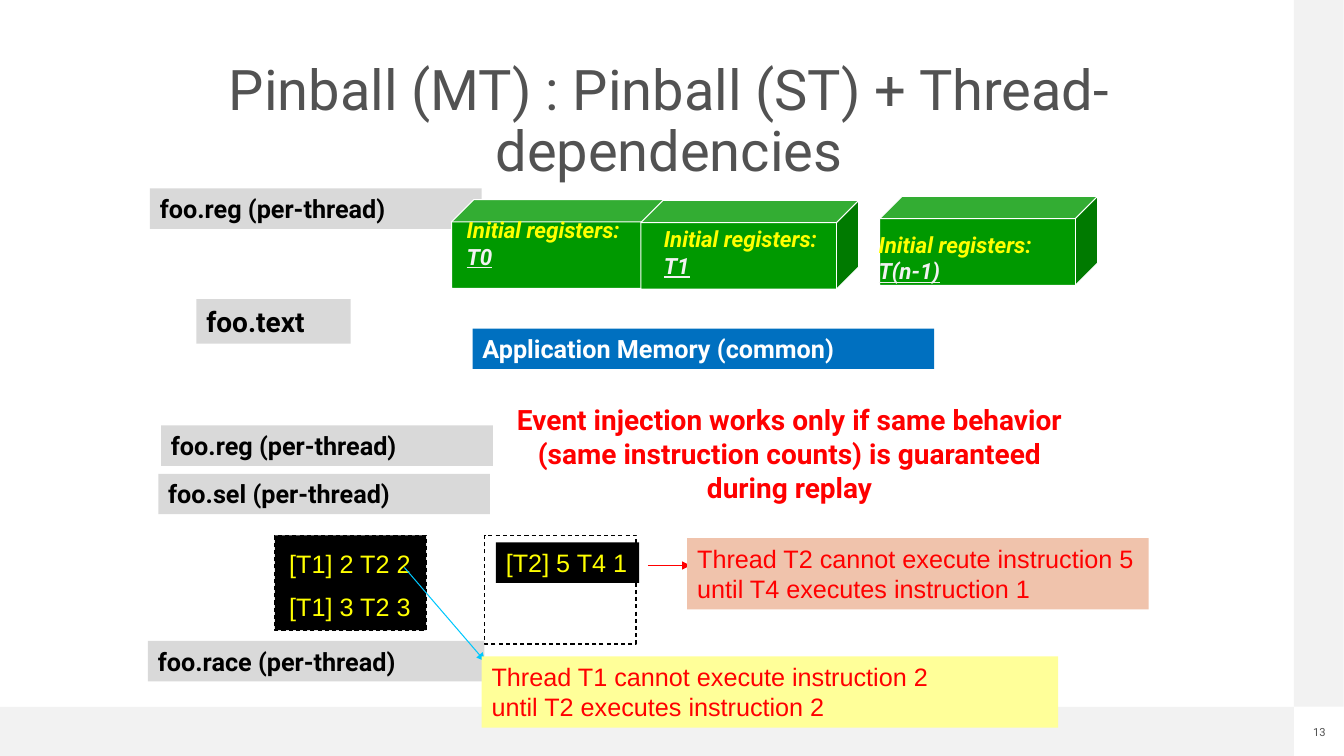
from lxml import etree
from pptx import Presentation
from pptx.dml.color import RGBColor
from pptx.enum.dml import MSO_LINE
from pptx.enum.shapes import MSO_CONNECTOR, MSO_SHAPE
from pptx.enum.text import MSO_ANCHOR, PP_ALIGN
from pptx.oxml.ns import qn
from pptx.util import Cm, Pt

prs = Presentation()
prs.slide_width, prs.slide_height = Cm(33.87), Cm(19.05)
slide = prs.slides.add_slide(prs.slide_layouts[6])
shapes = slide.shapes
rgb = RGBColor.from_string


def add_block(place, fill=None, line=None, dash=None, preset=MSO_SHAPE.RECTANGLE):
    block = shapes.add_shape(preset, *map(Cm, place))
    block.shadow.inherit = False
    if fill:
        block.fill.solid()
        block.fill.fore_color.rgb = rgb(fill)
    else:
        block.fill.background()
    if line:
        block.line.color.rgb = rgb(line)
        block.line.width = Pt(0.75)
        block.line.dash_style = dash
    else:
        block.line.fill.background()
    return block


def write(block, paragraphs, size, font="Roboto", align=PP_ALIGN.LEFT, wrap=True, **style):
    frame = block.text_frame
    frame.word_wrap = wrap
    frame.vertical_anchor = MSO_ANCHOR.TOP
    for index, runs in enumerate(paragraphs):
        paragraph = frame.paragraphs[0] if index == 0 else frame.add_paragraph()
        paragraph.alignment = align
        for text, color, extra in runs:
            run = paragraph.add_run()
            run.text = text
            run.font.color.rgb = rgb(color)
            values = {"name": font, "size": Pt(size), **style, **extra}
            for key, value in values.items():
                setattr(run.font, key, value)
    return frame


for margin in [(0, 17.81, 32.61, 1.25), (32.61, 0, 1.25, 17.81)]:
    add_block(margin, "F2F2F2")

headings = [
    ("13", (33.07, 18.29, 0.36, 0.33), 8, False, 1),
    ("Pinball (MT) : Pinball (ST) + Thread-dependencies", (1.57, 1.57, 30.58, 2.64), 40, True, 0.9),
]
for text, place, size, wrap, spacing in headings:
    heading = shapes.add_textbox(*map(Cm, place))
    frame = write(heading, [[(text, "525252", {})]], size, align=PP_ALIGN.CENTER, wrap=wrap)
    frame.paragraphs[0].line_spacing = spacing
    for side in ("left", "top", "right", "bottom"):
        setattr(frame, f"margin_{side}", 0)

labels = [
    ("foo.reg (per-thread)", (3.78, 4.75, 8.36, 1.02), "D9D9D9", "000000", 18),
    ("Application Memory (common)", (11.91, 8.28, 11.63, 1.02), "0070C0", "FFFFFF", 18),
    ("foo.text", (4.95, 7.54, 3.89, 1.12), "D9D9D9", "000000", 20),
    ("foo.reg (per-thread)", (4.06, 10.72, 8.36, 1.02), "D9D9D9", "000000", 18),
    ("foo.sel (per-thread)", (3.99, 11.94, 8.36, 1.02), "D9D9D9", "000000", 18),
    ("foo.race (per-thread)", (3.73, 16.15, 8.48, 1.02), "D9D9D9", "000000", 18),
]
for text, place, fill, color, size in labels:
    write(add_block(place, fill), [[(text, color, {})]], size, bold=True)

registers = [
    ("T0", (11.38, 5.03), (11.51, 5.33, 4.72, 1.63)),
    ("T1", (16.15, 5.05), (16.48, 5.56, 4.72, 1.63)),
    ("T(n-1)", (22.17, 4.95), (21.89, 5.69, 5.79, 1.63)),
]
for thread, corner, place in registers:
    add_block((*corner, 5.49, 2.24), "009900", "FFFFFF", preset=MSO_SHAPE.CUBE)
    runs = [("Initial registers: ", "FFFF00", {}), (thread, "F2F2F2", {"underline": True})]
    write(shapes.add_textbox(*map(Cm, place)), [runs], 16, bold=True, italic=True)

warning = shapes.add_textbox(Cm(12.3), Cm(10.03), Cm(15.2), Cm(2.82))
warning_text = "Event injection works only if same behavior (same instruction counts) is guaranteed during replay"
write(warning, [[(warning_text, "FF0000", {})]], 20, align=PP_ALIGN.CENTER, bold=True)

add_block((6.93, 13.49, 3.81, 2.39), "000000", "000000", MSO_LINE.DASH)
races = [
    ("[T1] 2 T2 2", 7.04, 13.69, None),
    ("[T1] 3 T2 3", 7.04, 14.78, None),
    ("[T2] 5 T4 1", 12.5, 13.67, "000000"),
]
for text, left, top, fill in races:
    write(add_block((left, top, 3.61, 1.02), fill), [[(text, "FFFF00", {})]], 18, "Arial", wrap=False)

explanations = [
    (["Thread T1 cannot execute instruction 2", "until T2 executes instruction 2"],
     (12.14, 16.54, 14.53, 1.8), "FFFF99", (10.19, 14.3, 12.22, 16.66), "00C7FD"),
    (["Thread T2 cannot execute instruction 5 until T4 executes instruction 1"],
     (17.32, 13.56, 11.63, 1.8), "F0C3AC", (16.33, 14.25, 17.4, 14.25), "FF0000"),
]
for sentences, place, fill, ends, color in explanations:
    arrow = shapes.add_connector(MSO_CONNECTOR.STRAIGHT, *map(Cm, ends))
    arrow.line.color.rgb = rgb(color)
    arrow.line.width = Pt(0.75)
    etree.SubElement(arrow.line._get_or_add_ln(), qn("a:tailEnd"), type="triangle")
    etree.SubElement(arrow._element.spPr, qn("a:effectLst"))
    write(add_block(place, fill), [[(text, "FF0000", {})] for text in sentences], 18, "Arial")

add_block((12.22, 13.49, 3.81, 2.74), line="000000", dash=MSO_LINE.DASH)

prs.save("out.pptx")
